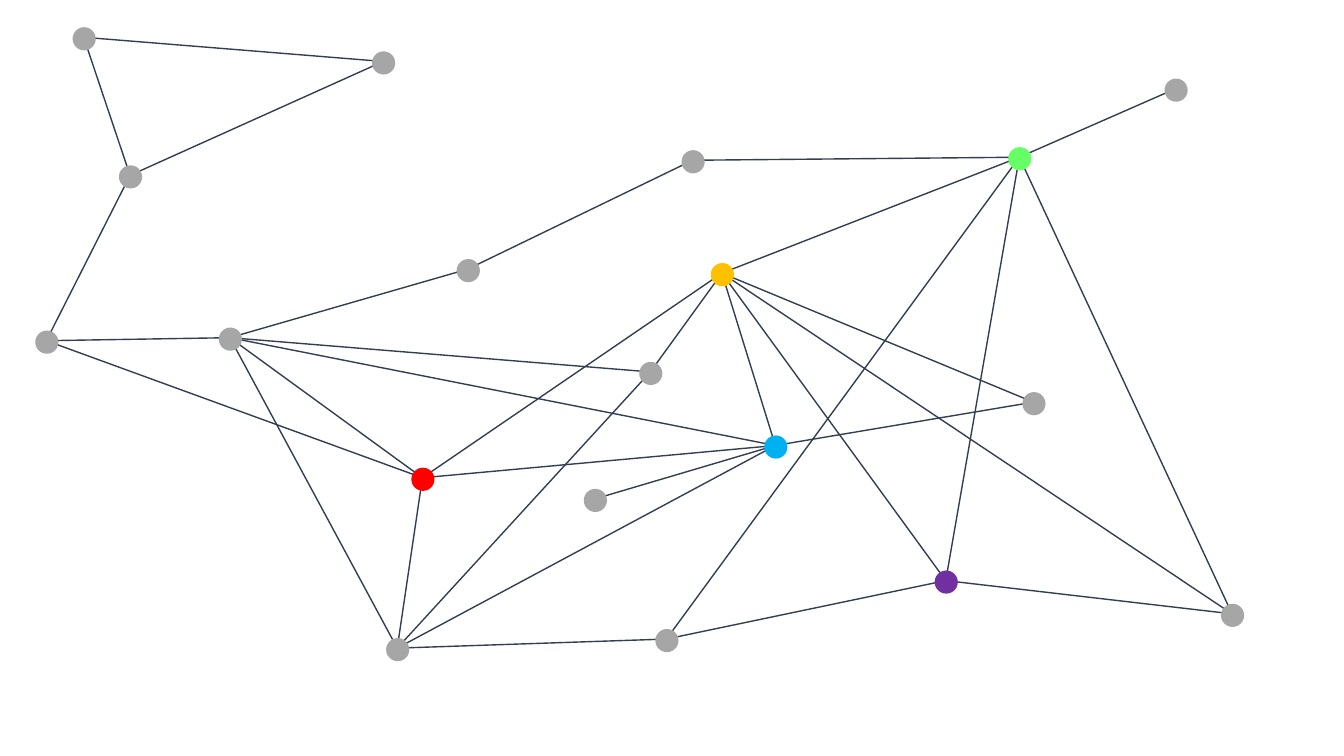
from pptx import Presentation
from pptx.dml.color import RGBColor
from pptx.enum.shapes import MSO_CONNECTOR, MSO_SHAPE
from pptx.oxml.ns import qn
from pptx.util import Inches, Pt
from lxml import etree

STRAIGHT, OVAL = MSO_CONNECTOR.STRAIGHT, MSO_SHAPE.OVAL
EDGE = RGBColor(0x33, 0x3F, 0x50)
GREY = RGBColor(0xA6, 0xA6, 0xA6)
GREEN = RGBColor(0x66, 0xFF, 0x66)
PURPLE = RGBColor(0x70, 0x30, 0xA0)
RED = RGBColor(0xFF, 0x00, 0x00)
AMBER = RGBColor(0xFF, 0xC0, 0x00)
BLUE = RGBColor(0x00, 0xB0, 0xF0)

# Nodes: left and top in inches, and colour
DIAMETER = 0.23
ANCHOR = (0.11, 0.1)  # where edges meet, from a node's left and top
NODES = {
    "upper left": (1.18, 1.64, GREY),
    "top left": (0.72, 0.27, GREY),
    "top": (3.69, 0.51, GREY),
    "far left": (0.35, 3.28, GREY),
    "left hub": (2.17, 3.25, GREY),
    "mid left": (4.53, 2.57, GREY),
    "upper mid": (6.76, 1.49, GREY),
    "green": (10, 1.46, GREEN),
    "top right": (11.55, 0.78, GREY),
    "purple": (9.27, 5.66, PURPLE),
    "bottom": (6.5, 6.24, GREY),
    "far right": (12.11, 5.99, GREY),
    "bottom left": (3.83, 6.33, GREY),
    "red": (4.08, 4.64, RED),
    "amber": (7.05, 2.61, AMBER),
    "right": (10.14, 3.89, GREY),
    "centre": (6.34, 3.59, GREY),
    "blue": (7.58, 4.32, BLUE),
    "leaf": (5.79, 4.85, GREY),
}

# Edges: each node with the neighbours it reaches
LINKS = {
    "upper left": ["top left", "top", "far left"],
    "top": ["top left"],
    "left hub": ["far left", "mid left", "red", "bottom left", "centre", "blue"],
    "upper mid": ["mid left", "green"],
    "green": ["top right", "purple", "far right", "bottom", "amber"],
    "purple": ["bottom", "far right", "amber"],
    "red": ["far left", "bottom left", "blue", "amber"],
    "bottom left": ["bottom", "centre", "blue"],
    "amber": ["far right", "right", "blue", "centre"],
    "blue": ["right", "leaf"],
}

prs = Presentation()
prs.slide_width, prs.slide_height = Inches(13.33), Inches(7.5)
s = prs.slides.add_slide(prs.slide_layouts[6])

# Edges, behind the nodes
for start, neighbours in LINKS.items():
    for end in neighbours:
        ends = [Inches(corner + shift) for name in (start, end)
                for corner, shift in zip(NODES[name], ANCHOR)]
        line = s.shapes.add_connector(STRAIGHT, *ends)
        line.line.color.rgb = EDGE
        line.line.width = Pt(1)
        etree.SubElement(line._element.spPr, qn("a:effectLst"))

# Nodes
for left, top, colour in NODES.values():
    sp = s.shapes.add_shape(OVAL, Inches(left), Inches(top),
                            Inches(DIAMETER), Inches(DIAMETER))
    sp.shadow.inherit = False
    sp.fill.solid()
    sp.fill.fore_color.rgb = colour
    sp.line.fill.background()

prs.save("out.pptx")
